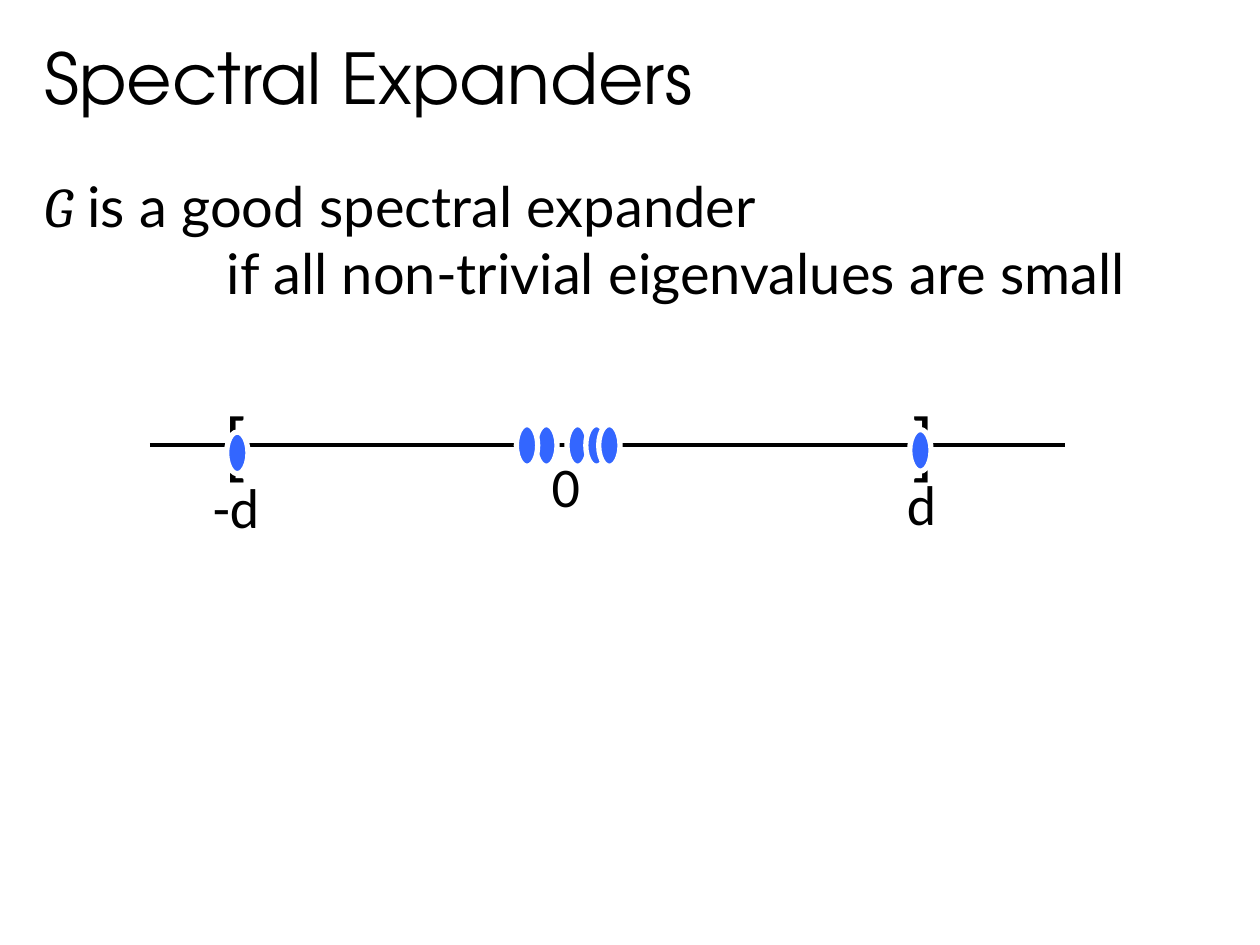
from lxml.etree import SubElement
from pptx import Presentation
from pptx.dml.color import RGBColor
from pptx.enum.shapes import MSO_CONNECTOR, MSO_SHAPE
from pptx.enum.text import MSO_ANCHOR, MSO_AUTO_SIZE, PP_ALIGN
from pptx.oxml.ns import qn
from pptx.util import Cm, Pt


def color(hex_string):
    return RGBColor.from_string(hex_string)


def format_run(run, font_name, size, italic=False):
    run.font.name = font_name
    run.font.size = Pt(size)
    run.font.italic = italic
    run.font.color.rgb = color("000000")


presentation = Presentation()
presentation.slide_width = Cm(25.4)
presentation.slide_height = Cm(19.05)
slide = presentation.slides.add_slide(presentation.slide_layouts[1])

title = slide.shapes.title
title.left, title.top, title.width, title.height = Cm(0.64), Cm(0.56), Cm(14.1), Cm(1.96)
title.text_frame.text = "Spectral Expanders"
format_run(title.text_frame.paragraphs[0].runs[0], "TeX Gyre Adventor", 40)

body = slide.placeholders[1]
body.left, body.top, body.width, body.height = Cm(0.64), Cm(3.33), Cm(23.29), Cm(3)
first_line = body.text_frame.paragraphs[0]
graph_run = first_line.add_run()
graph_run.text = "G"
format_run(graph_run, "Cambria", 32, italic=True)
statement_run = first_line.add_run()
statement_run.text = " is a good spectral expander"
format_run(statement_run, "Lato", 32)
second_line = body.text_frame.add_paragraph()
second_line.text = "if all non-trivial eigenvalues are small"
format_run(second_line.runs[0], "Lato", 32)

for paragraph, margin in [(first_line, 0), (second_line, 3.68)]:
    properties = paragraph._p.get_or_add_pPr()
    properties.set("marL", str(Cm(margin)))
    properties.set("indent", "0")
    paragraph.space_before = Pt(0)
    SubElement(properties, qn("a:buNone"))

for placeholder in (title, body):
    text_frame = placeholder.text_frame
    text_frame.word_wrap = False
    text_frame.auto_size = MSO_AUTO_SIZE.NONE
    text_frame.vertical_anchor = MSO_ANCHOR.TOP
    for paragraph in text_frame.paragraphs:
        paragraph.alignment = PP_ALIGN.LEFT

axis = slide.shapes.add_connector(MSO_CONNECTOR.STRAIGHT, Cm(3.02), Cm(8.97), Cm(21.46), Cm(8.97))
axis.line.color.rgb = color("000000")
axis.line.width = Pt(2.5)
SubElement(axis._element.spPr, qn("a:effectLst"))

axis_labels = [
    ("0", 10.87, 8.97, 1.09, 1.63, 32),
    ("[", 4.27, 7.85, 0.99, 2.13, 44),
    ("]", 18.11, 7.85, 0.99, 2.13, 44),
    ("-d", 4.04, 9.4, 1.47, 1.63, 32),
    ("d", 18.03, 9.35, 1.12, 1.63, 32),
]
for text, left, top, width, height, size in axis_labels:
    label = slide.shapes.add_textbox(Cm(left), Cm(top), Cm(width), Cm(height))
    label.text_frame.word_wrap = False
    label.text_frame.text = text
    format_run(label.text_frame.paragraphs[0].runs[0], "Calibri", size)

eigenvalues = [
    (10.8, 8.56), (10.41, 8.56), (11.43, 8.56), (11.81, 8.56), (12.07, 8.56),
    (18.34, 8.66), (4.57, 8.71),
]
for left, top in eigenvalues:
    eigenvalue = slide.shapes.add_shape(MSO_SHAPE.OVAL, Cm(left), Cm(top), Cm(0.43), Cm(0.84))
    eigenvalue.shadow.inherit = False
    eigenvalue.fill.solid()
    eigenvalue.fill.fore_color.rgb = color("3366FF")
    eigenvalue.line.color.rgb = color("FFFFFF")
    eigenvalue.line.width = Pt(3)

presentation.save("out.pptx")
